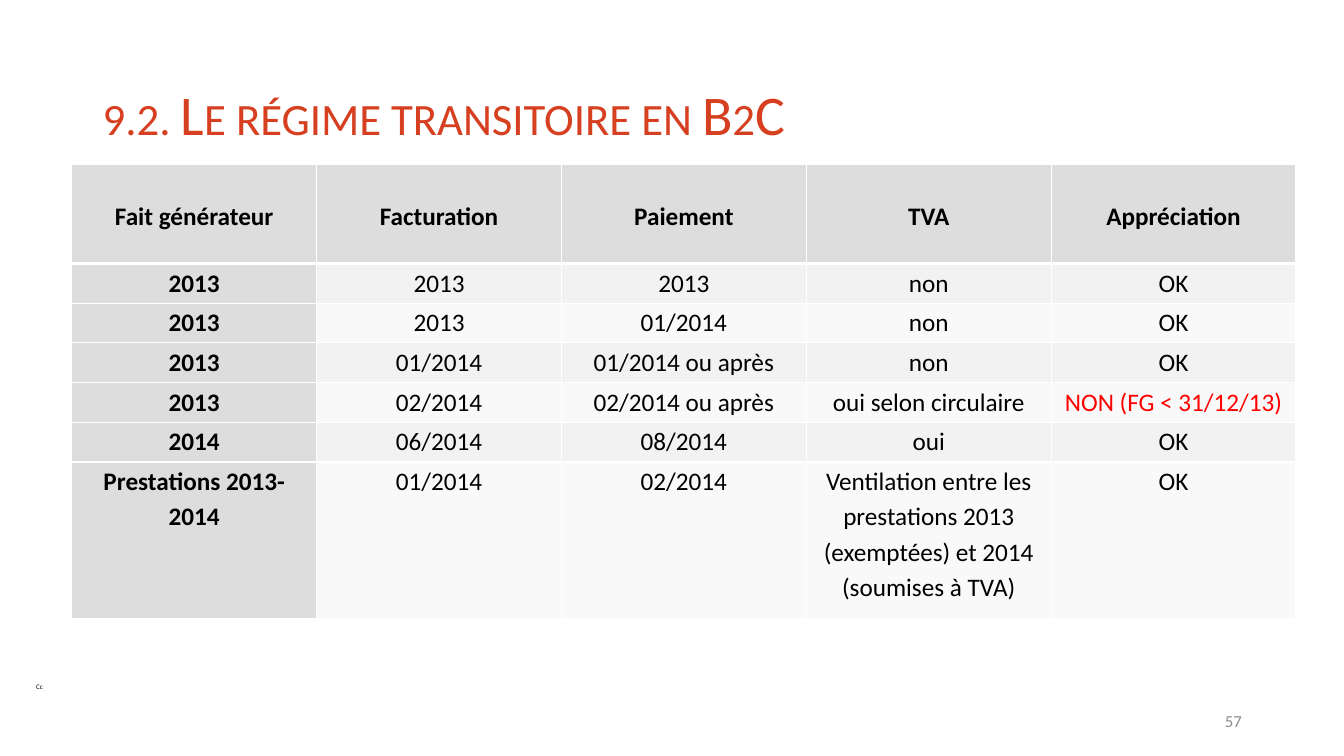
"""Build the slide on the B2C transitional VAT regime."""
from dataclasses import dataclass

import pptx
import pptx.dml.color
import pptx.enum.text
import pptx.oxml
import pptx.oxml.ns
import pptx.util
from pptx.util import Cm

ALIGN = pptx.enum.text.PP_ALIGN
ANCHOR = pptx.enum.text.MSO_ANCHOR


@dataclass(frozen=True)
class Theme:
    font: str = "Calibri"
    title: str = "D64020"
    ink: str = "000000"
    warning: str = "FF0000"
    muted: str = "8C8C8C"
    border: str = "FFFFFF"
    heading_fill: str = "DDDDDD"
    band_fills: tuple[str, str] = ("F2F2F2", "F9F9F9")
    title_size: float = 40
    table_size: float = 18
    number_size: float = 12
    mark_size: float = 5


@dataclass(frozen=True)
class Label:
    text: str
    left: float
    top: float
    width: float
    height: float
    size: float
    color: str
    align: ALIGN = ALIGN.LEFT
    small_caps: bool = False


THEME = Theme()
LABELS = (
    Label("9.2. Le régime transitoire en B2C", 2.34, 1.02, 29.2, 3.68,
          THEME.title_size, THEME.title, small_caps=True),
    Label("Cc", 0.66, 17.05, 29.7, 0.5, THEME.mark_size, THEME.ink),
    Label("57", 23.93, 17.65, 7.62, 1.02, THEME.number_size, THEME.muted, ALIGN.RIGHT),
)
REGIME = (
    ("Fait générateur", "Facturation", "Paiement", "TVA", "Appréciation"),
    ("2013", "2013", "2013", "non", "OK"),
    ("2013", "2013", "01/2014", "non", "OK"),
    ("2013", "01/2014", "01/2014 ou après", "non", "OK"),
    ("2013", "02/2014", "02/2014 ou après", "oui selon circulaire", "NON (FG < 31/12/13)"),
    ("2014", "06/2014", "08/2014", "oui", "OK"),
    ("Prestations 2013-2014", "01/2014", "02/2014",
     "Ventilation entre les prestations 2013 (exemptées) et 2014 (soumises à TVA)", "OK"),
)
COLUMN_WIDTH = 6.17
ROW_HEIGHTS = (2.49, *[1.0] * 5, 3.94)


def rgb(color: str) -> pptx.dml.color.RGBColor:
    """Turn a hex string into a colour."""
    return pptx.dml.color.RGBColor.from_string(color)


def style_run(run, size: float, color: str, bold: bool = False) -> None:
    """Set the typeface, size, colour and weight of a run."""
    run.font.name = THEME.font
    run.font.size = pptx.util.Pt(size)
    run.font.color.rgb = rgb(color)
    run.font.bold = bold


def add_label(slide, label: Label) -> None:
    """Add one text box to the slide."""
    box = slide.shapes.add_textbox(
        Cm(label.left), Cm(label.top), Cm(label.width), Cm(label.height))
    frame = box.text_frame
    frame.word_wrap = True
    frame.vertical_anchor = ANCHOR.MIDDLE
    frame.text = label.text
    paragraph = frame.paragraphs[0]
    paragraph.alignment = label.align
    run = paragraph.runs[0]
    style_run(run, label.size, label.color)
    if label.small_caps:
        run.font._element.set("cap", "small")


def add_borders(cell, widths: dict[str, float]) -> None:
    """Draw the borders of a cell, given in points by side."""
    properties = cell._tc.get_or_add_tcPr()
    for index, side in enumerate("LRTB"):
        properties.insert(index, pptx.oxml.parse_xml(
            f'<a:ln{side} {pptx.oxml.ns.nsdecls("a")} w="{pptx.util.Pt(widths[side])}">'
            f'<a:solidFill><a:srgbClr val="{THEME.border}"/></a:solidFill></a:ln{side}>'))


def fill_cell(cell, text: str, row: int, column: int) -> None:
    """Write and format one cell of the regime table."""
    is_heading = row == 0 or column == 0
    cell.margin_left = cell.margin_right = Cm(0.18)
    cell.margin_top = cell.margin_bottom = 0
    cell.vertical_anchor = ANCHOR.MIDDLE if row == 0 else ANCHOR.TOP
    cell.fill.solid()
    cell.fill.fore_color.rgb = rgb(
        THEME.heading_fill if is_heading else THEME.band_fills[(row - 1) % 2])
    cell.text_frame.text = text
    paragraph = cell.text_frame.paragraphs[0]
    paragraph.alignment = ALIGN.CENTER
    paragraph.line_spacing = 1.15
    color = THEME.warning if text.startswith("NON") else THEME.ink
    style_run(paragraph.runs[0], THEME.table_size, color, is_heading)
    add_borders(cell, {"L": 1, "R": 1, "T": 3 if row == 1 else 1, "B": 3 if row == 0 else 1})


def add_regime_table(slide) -> None:
    """Add the table of cases."""
    columns = len(REGIME[0])
    table = slide.shapes.add_table(
        len(REGIME), columns, Cm(1.81), Cm(4.15),
        Cm(COLUMN_WIDTH * columns), Cm(sum(ROW_HEIGHTS))).table
    table.first_col = True
    for column in table.columns:
        column.width = Cm(COLUMN_WIDTH)
    for row, height in zip(table.rows, ROW_HEIGHTS):
        row.height = Cm(height)
    for row, texts in enumerate(REGIME):
        for column, text in enumerate(texts):
            fill_cell(table.cell(row, column), text, row, column)


def main() -> None:
    """Create and save the presentation."""
    presentation = pptx.Presentation()
    presentation.slide_width = Cm(33.87)
    presentation.slide_height = Cm(19.05)
    slide = presentation.slides.add_slide(presentation.slide_layouts[6])
    for label in LABELS:
        add_label(slide, label)
    add_regime_table(slide)
    presentation.save("out.pptx")


if __name__ == "__main__":
    main()
